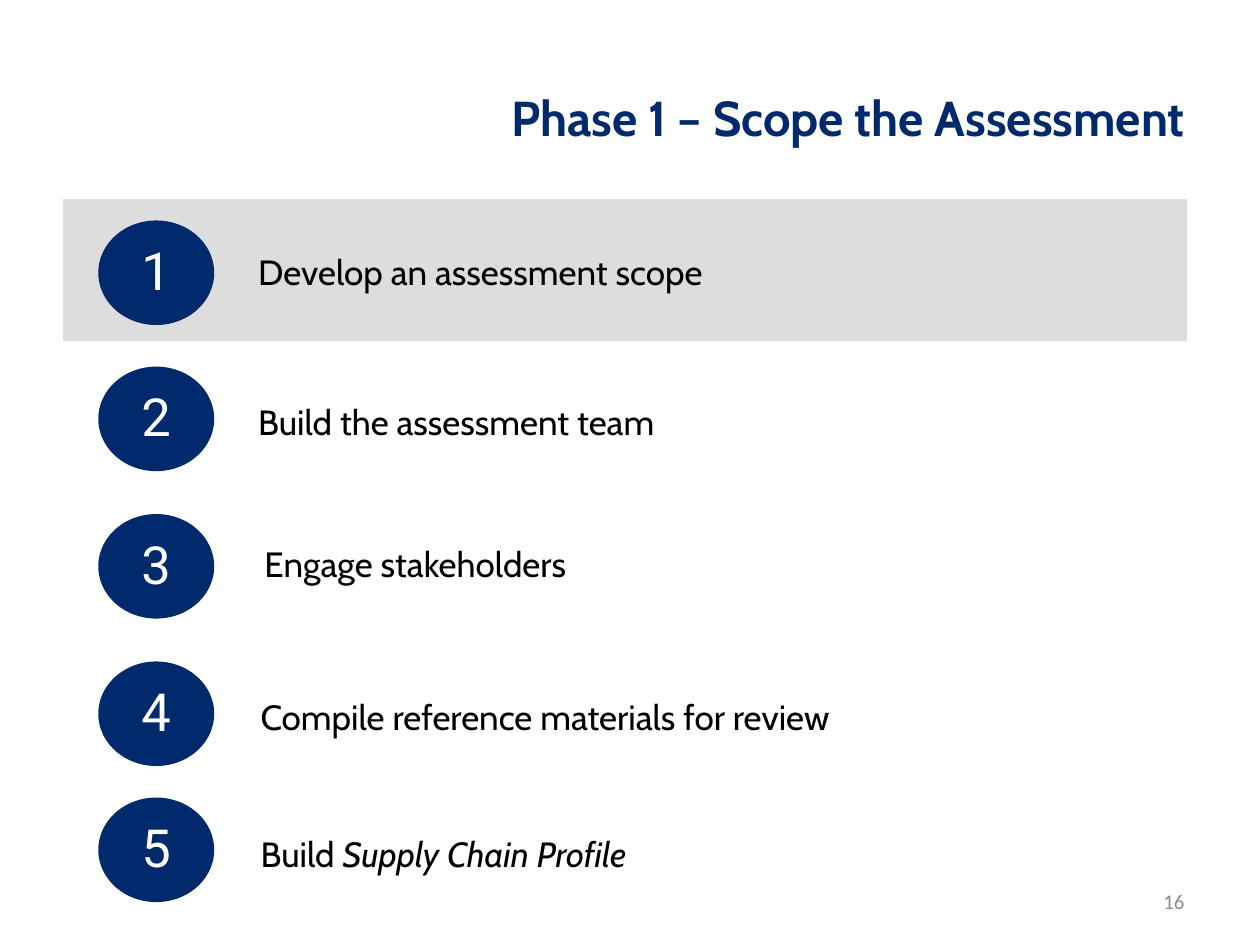
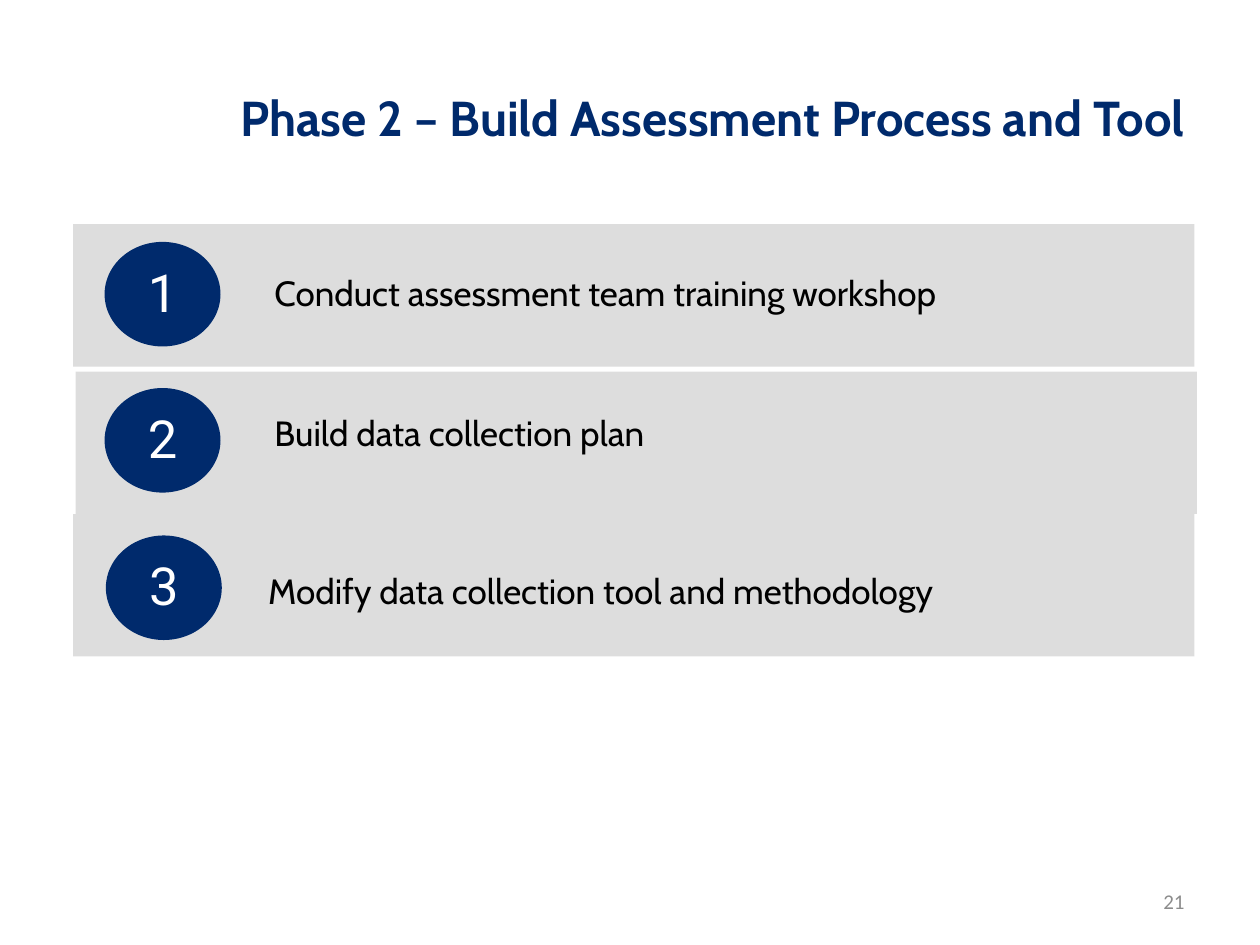
from dataclasses import dataclass
from pptx import Presentation
from pptx.dml.color import RGBColor as RGB
from pptx.enum.shapes import MSO_SHAPE as Shape
from pptx.enum.text import MSO_ANCHOR as Anchor, PP_ALIGN as Align
from pptx.util import Inches, Pt


@dataclass(frozen=True)
class Theme:
    navy: RGB = RGB(0x00, 0x2A, 0x6C)
    band: RGB = RGB(0xDD, 0xDD, 0xDD)
    black: RGB = RGB(0, 0, 0)
    white: RGB = RGB(255, 255, 255)
    grey: RGB = RGB(0x8C, 0x8C, 0x8C)
    text_font: str = "Cabin"
    badge_font: str = "Roboto"
    page_font: str = "Calibri"
    title_size: int = 28
    label_size: int = 20
    badge_size: int = 30
    page_size: int = 12


theme = Theme()
BAND_HEIGHT = 1.13
BADGE_WIDTH, BADGE_HEIGHT = 0.92, 0.83

# Bands: left, top, width. Steps: badge left and top, label box, label runs (text, italic).
phases = [
    {
        "title": "Phase 1 – Scope the Assessment",
        "page": "16",
        "bands": [(0.5, 1.58, 8.92)],
        "steps": [
            (0.78, 1.75, (1.95, 1.75, 5.17, 0.81), [("Develop an assessment scope", False)]),
            (0.78, 2.91, (1.95, 2.94, 5.17, 0.81), [("Build the assessment team", False)]),
            (0.78, 4.08, (2, 4.12, 5.08, 0.71), [("Engage stakeholders", False)]),
            (0.78, 5.25, (1.97, 5.33, 5.14, 0.71),
             [("Compile reference materials for review", False)]),
            (0.78, 6.33, (1.97, 6.42, 5.14, 0.71),
             [("Build ", False), ("Supply Chain Profile", True)]),
        ],
    },
    {
        "title": "Phase 2 – Build Assessment Process and Tool",
        "page": "21",
        "bands": [(0.58, 4.08, 8.9), (0.6, 2.95, 8.9), (0.58, 1.78, 8.9)],
        "steps": [
            (0.83, 1.92, (2.08, 1.92, 5.67, 0.81),
             [("Conduct assessment team training workshop", False)]),
            (0.83, 3.08, (2.08, 3.08, 5.58, 0.71), [("Build data collection plan", False)]),
            (0.84, 4.25, (2.03, 4.33, 5.64, 0.71),
             [("Modify data collection tool and methodology", False)]),
        ],
    },
]


def add_filled(slide, preset, box, color):
    filled = slide.shapes.add_shape(preset, *map(Inches, box))
    filled.shadow.inherit = False
    filled.fill.solid()
    filled.fill.fore_color.rgb = color
    filled.line.fill.background()
    return filled


def write(holder, runs, font, size, color, align=Align.LEFT, bold=False):
    frame = holder.text_frame
    frame.word_wrap = True
    frame.vertical_anchor = Anchor.MIDDLE
    paragraph = frame.paragraphs[0]
    paragraph.alignment = align
    for text, italic in runs:
        run = paragraph.add_run()
        run.text = text
        run.font.name = font
        run.font.size = Pt(size)
        run.font.color.rgb = color
        run.font.bold = bold
        run.font.italic = italic
    return frame


deck = Presentation()
deck.slide_width, deck.slide_height = Inches(10), Inches(7.5)
blank = deck.slide_layouts[6]

for phase in phases:
    slide = deck.slides.add_slide(blank)

    # Grey bands behind the highlighted steps
    for left, top, width in phase["bands"]:
        add_filled(slide, Shape.RECTANGLE, (left, top, width, BAND_HEIGHT), theme.band)

    # Title
    title = slide.shapes.add_textbox(Inches(0.5), Inches(0.3), Inches(9), Inches(1.25))
    write(title, [(phase["title"], False)], theme.text_font, theme.title_size,
          theme.navy, Align.RIGHT, bold=True)

    # Numbered steps
    for number, (left, top, label_box, runs) in enumerate(phase["steps"], start=1):
        badge = add_filled(slide, Shape.OVAL, (left, top, BADGE_WIDTH, BADGE_HEIGHT), theme.navy)
        frame = write(badge, [(str(number), False)], theme.badge_font, theme.badge_size,
                      theme.white, Align.CENTER)
        frame.margin_left = frame.margin_right = Inches(0.03)
        frame.margin_top = frame.margin_bottom = Inches(0.03)
        frame.paragraphs[0].line_spacing = 0.95

        label = slide.shapes.add_textbox(*map(Inches, label_box))
        write(label, runs, theme.text_font, theme.label_size, theme.black)

    # Page number
    page = slide.shapes.add_textbox(Inches(7.17), Inches(6.95), Inches(2.33), Inches(0.4))
    write(page, [(phase["page"], False)], theme.page_font, theme.page_size,
          theme.grey, Align.RIGHT)

deck.save("out.pptx")
